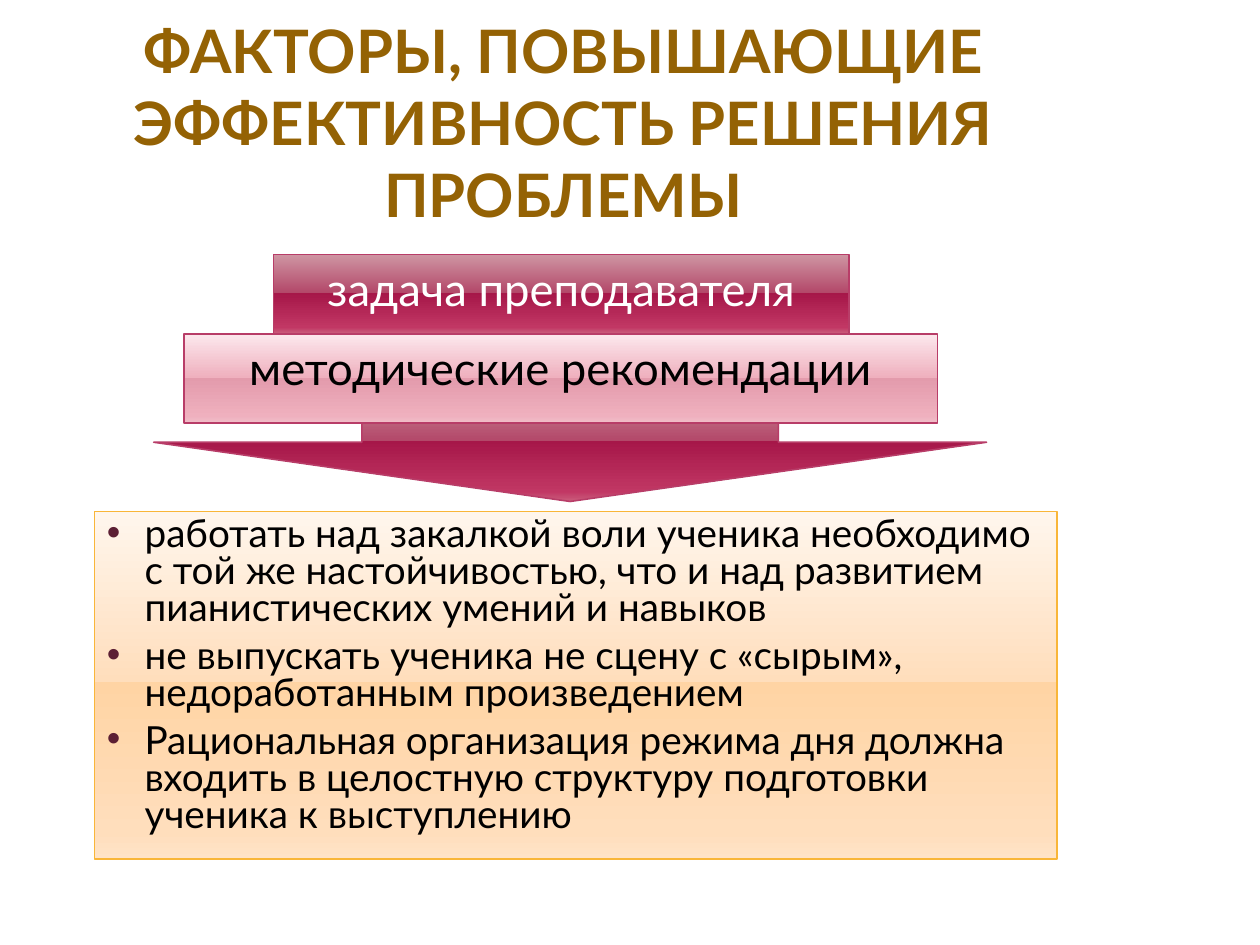
from lxml import etree
from pptx import Presentation
from pptx.dml.color import RGBColor
from pptx.enum.shapes import MSO_SHAPE
from pptx.enum.text import MSO_ANCHOR, MSO_AUTO_SIZE, PP_ALIGN
from pptx.oxml.ns import qn
from pptx.util import Inches, Pt

RECT, ARROW = MSO_SHAPE.RECTANGLE, MSO_SHAPE.DOWN_ARROW
TOP, BOTTOM = MSO_ANCHOR.TOP, MSO_ANCHOR.BOTTOM
LEFT, CENTER = PP_ALIGN.LEFT, PP_ALIGN.CENTER
FIXED = MSO_AUTO_SIZE.NONE

FONT = "Lato"
STOPS = [0, 49, 49, 92, 100]
DARK = ["CE94A2", "B34869", "A61749", "C13764", "CA5D7C"]
PINK = ["FCE8ED", "EFB0BE", "E39BAC", "EFB0BE", "F0BEC9"]
PEACH = ["FFF6ED", "FFDEBC", "FFD4A4", "FFDEBC", "FFE3C7"]
ROSE, GOLD = "B83D68", "F9B639"


def write(shape, lines, size, color, bold=False, align=CENTER, anchor=TOP,
          inset=(0.1, 0.05), space=None, bullet=None):
    frame = shape.text_frame
    frame.word_wrap = True
    frame.auto_size = FIXED
    frame.vertical_anchor = anchor
    frame.margin_left = frame.margin_right = Inches(inset[0])
    frame.margin_top = frame.margin_bottom = Inches(inset[1])
    for i, line in enumerate(lines):
        para = frame.add_paragraph() if i else frame.paragraphs[0]
        if bullet:
            props = para._p.get_or_add_pPr()
            props.set("marL", str(Inches(0.3)))
            props.set("indent", str(-Inches(0.3)))
            tint = etree.SubElement(props, qn("a:buClr"))
            etree.SubElement(tint, qn("a:srgbClr"), val=bullet)
            etree.SubElement(props, qn("a:buFont"), typeface="Arial")
            etree.SubElement(props, qn("a:buChar"), char="•")
        para.alignment = align
        para.line_spacing = space
        para.space_before = Pt(6 if i else 0)
        run = para.add_run()
        run.text = line
        run.font.name = FONT
        run.font.size = Pt(size)
        run.font.bold = bold
        run.font.color.rgb = RGBColor.from_string(color)


def panel(kind, box, colors, edge):
    shape = slide.shapes.add_shape(kind, *map(Inches, box))
    shape.shadow.inherit = False
    shape.fill.gradient()
    shape.fill.gradient_angle = 270
    # Swap the two default stops for the glossy five
    stops = shape._element.spPr.find(".//" + qn("a:gsLst"))
    for stop in list(stops):
        stops.remove(stop)
    for pos, color in zip(STOPS, colors):
        stop = etree.SubElement(stops, qn("a:gs"), pos=str(pos * 1000))
        etree.SubElement(stop, qn("a:srgbClr"), val=color)
    shape.line.color.rgb = RGBColor.from_string(edge)
    shape.line.width = Pt(0.9)
    return shape


prs = Presentation()
prs.slide_width, prs.slide_height = Inches(10), Inches(7.5)
slide = prs.slides.add_slide(prs.slide_layouts[5])

# Title
title = slide.shapes.title
title.left, title.top = Inches(0.51), Inches(0.13)
title.width, title.height = Inches(7.92), Inches(1.69)
write(title, ["ФАКТОРЫ, ПОВЫШАЮЩИЕ ЭФФЕКТИВНОСТЬ РЕШЕНИЯ ПРОБЛЕМЫ"],
      34.2, "946204", bold=True, anchor=BOTTOM, inset=(0.05, 0))

# Arrow behind the two headings
panel(ARROW, (1.22, 3.04, 6.61, 0.94), DARK, ROSE)

# Headings
task = panel(RECT, (2.17, 2.02, 4.57, 0.63), DARK, ROSE)
write(task, ["задача преподавателя"], 26, "FFFFFF")
advice = panel(RECT, (1.46, 2.65, 5.98, 0.71), PINK, ROSE)
write(advice, ["методические рекомендации"], 26, "000000")

# Recommendations
tips = panel(RECT, (0.75, 4.06, 7.64, 2.76), PEACH, GOLD)
write(tips, [
    "работать над закалкой воли ученика необходимо с той же "
    "настойчивостью, что и над развитием пианистических умений и навыков",
    "не выпускать ученика не сцену с «сырым», недоработанным произведением",
    "Рациональная организация режима дня должна входить в целостную "
    "структуру подготовки ученика к выступлению",
], 22.1, "000000", align=LEFT, space=0.8, bullet="5C1F34")

prs.save("out.pptx")
